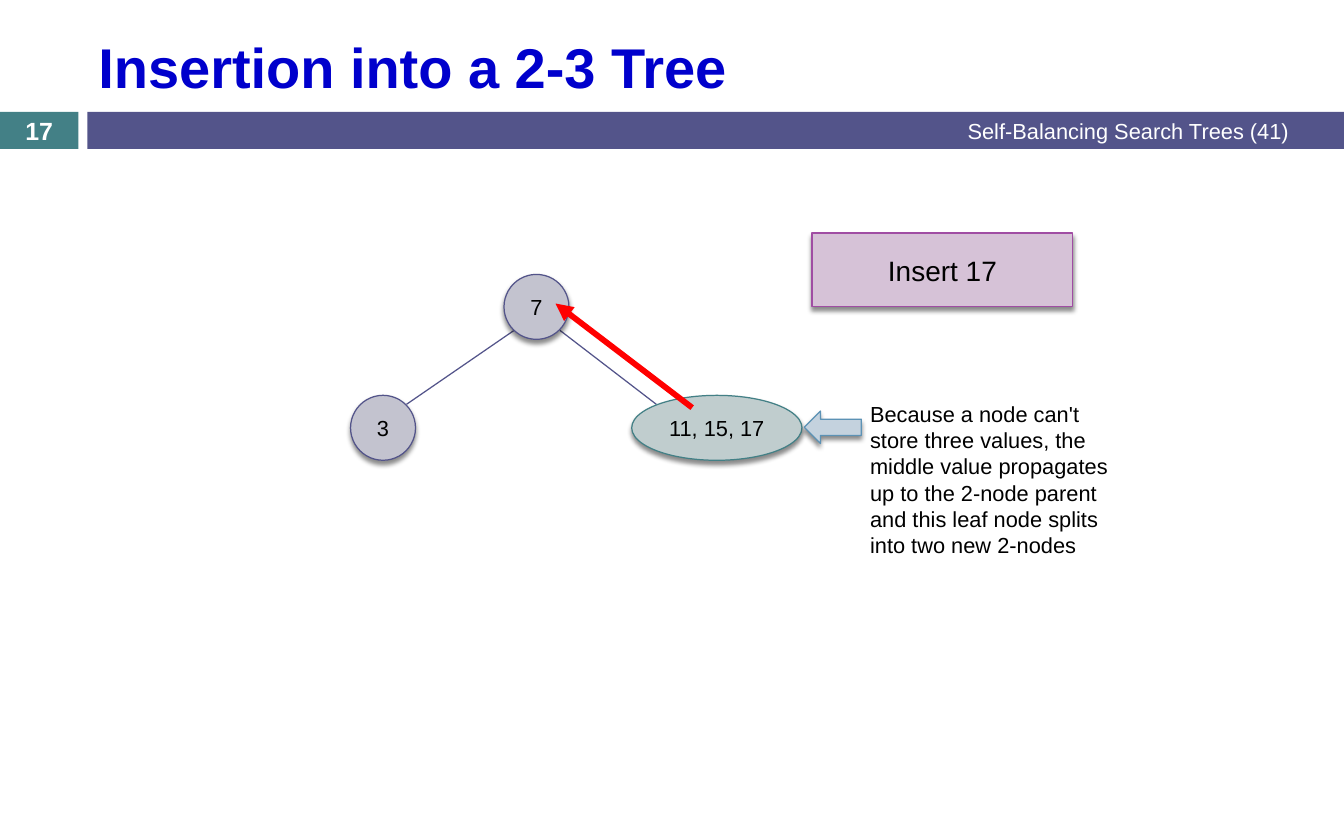
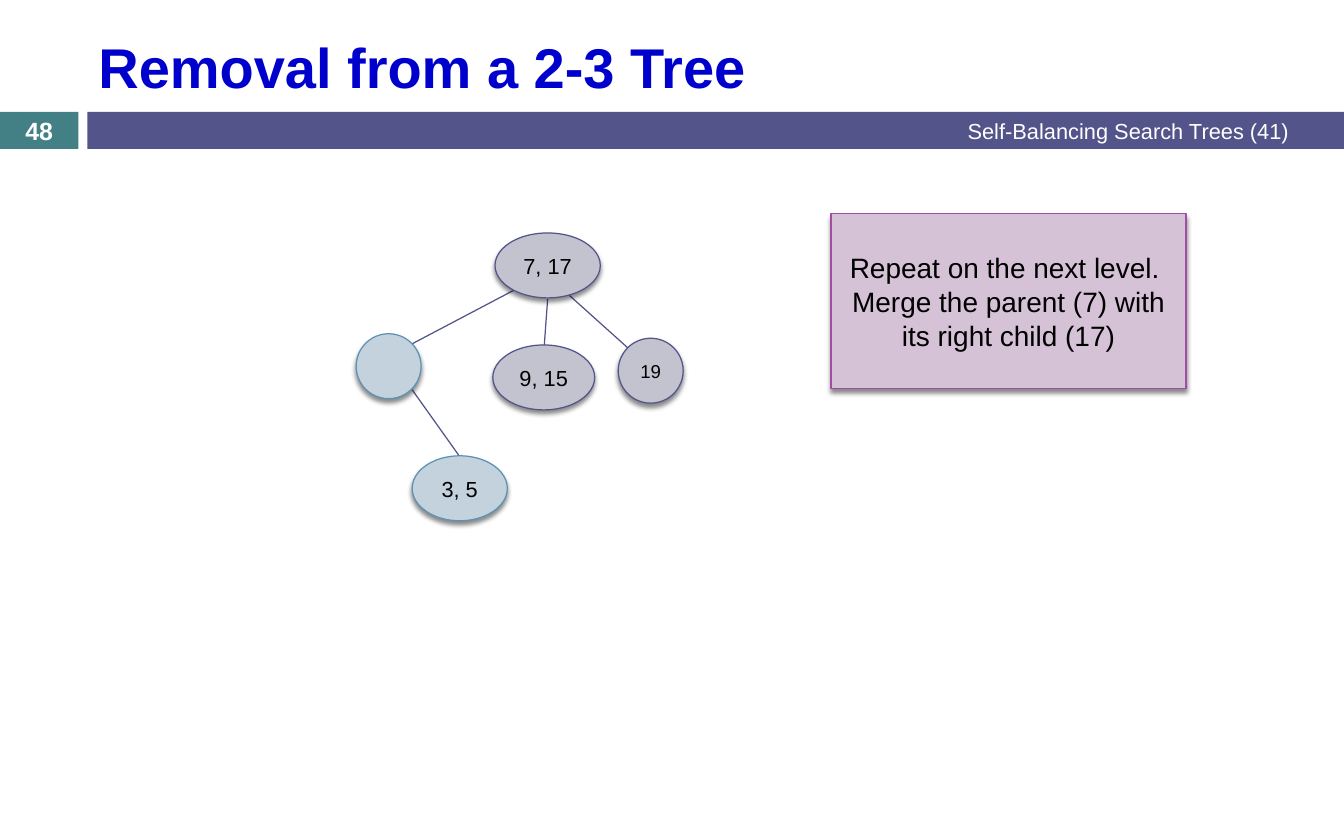
from lxml import etree
from pptx import Presentation
from pptx.dml.color import RGBColor
from pptx.enum.shapes import MSO_CONNECTOR, MSO_SHAPE
from pptx.enum.text import MSO_ANCHOR, MSO_AUTO_SIZE, PP_ALIGN
from pptx.oxml import parse_xml
from pptx.oxml.ns import nsdecls, qn
from pptx.util import Inches, Pt

RECT, ELLIPSE, ARROW = MSO_SHAPE.RECTANGLE, MSO_SHAPE.OVAL, MSO_SHAPE.RIGHT_ARROW
STRAIGHT = MSO_CONNECTOR.STRAIGHT
LEFT, CENTER, RIGHT = PP_ALIGN.LEFT, PP_ALIGN.CENTER, PP_ALIGN.RIGHT
TOP, MIDDLE = MSO_ANCHOR.TOP, MSO_ANCHOR.MIDDLE
GROW = MSO_AUTO_SIZE.SHAPE_TO_FIT_TEXT

BLACK = RGBColor(0x00, 0x00, 0x00)
WHITE = RGBColor(0xFF, 0xFF, 0xFF)
BLUE = RGBColor(0x00, 0x00, 0xCC)
RED = RGBColor(0xFF, 0x00, 0x00)
INDIGO = RGBColor(0x53, 0x54, 0x8A)
TEAL = RGBColor(0x43, 0x80, 0x86)
SKY = RGBColor(0x5C, 0x92, 0xB5)
PURPLE = RGBColor(0xA0, 0x4D, 0xA3)
PALE_INDIGO = RGBColor(0xC3, 0xC3, 0xCF)
PALE_TEAL = RGBColor(0xC0, 0xCD, 0xCE)
PALE_SKY = RGBColor(0xC4, 0xD2, 0xDE)
PALE_PURPLE = RGBColor(0xD6, 0xC2, 0xD7)

PLAIN_NODE = (PALE_INDIGO, INDIGO)
FULL_NODE = (PALE_TEAL, TEAL)
MARKED_NODE = (PALE_SKY, SKY)
NOTE = (PALE_PURPLE, PURPLE)

SHADOW = (
    f'<a:effectLst {nsdecls("a")}><a:outerShdw blurRad="38100" dist="30480" '
    'dir="5400000" rotWithShape="0"><a:srgbClr val="000000">'
    '<a:alpha val="45000"/></a:srgbClr></a:outerShdw></a:effectLst>'
)


class Deck:
    font = "Arial"
    footer = "Self-Balancing Search Trees (41)"
    outline = 0.79
    node_height = 0.58

    def __init__(self):
        self.prs = Presentation()
        self.prs.slide_width = Inches(12)
        self.prs.slide_height = Inches(7.5)
        self.s = None

    def slide(self, title, number):
        self.s = self.prs.slides.add_slide(self.prs.slide_layouts[6])
        self.band(0, 0.7, TEAL)
        self.band(0.78, 11.22, INDIGO)
        self.text(4.5, 0.99, 7.11, 0.35, self.footer, 14, WHITE, RIGHT, MIDDLE)
        self.text(0, 1, 0.7, 0.33, number, 16, WHITE, CENTER, MIDDLE, bold=True)
        self.text(0.78, 0.19, 10.7, 0.8, title, 36, BLUE, LEFT, MIDDLE, bold=True)

    def label(self, sp, text, size, color=BLACK, align=CENTER, anchor=MIDDLE, bold=False):
        tf = sp.text_frame
        tf.word_wrap = True
        tf.vertical_anchor = anchor
        tf.text = text
        for p in tf.paragraphs:
            p.alignment = align
            for r in p.runs:
                r.font.name = self.font
                r.font.size = Pt(size)
                r.font.bold = bold
                r.font.color.rgb = color

    def text(self, x, y, w, h, text, size, color=BLACK, align=LEFT, anchor=TOP, bold=False):
        sp = self.s.shapes.add_textbox(Inches(x), Inches(y), Inches(w), Inches(h))
        self.label(sp, text, size, color, align, anchor, bold)
        return sp

    def shape(self, kind, x, y, w, h, fill):
        sp = self.s.shapes.add_shape(kind, Inches(x), Inches(y), Inches(w), Inches(h))
        sp.shadow.inherit = False
        sp.fill.solid()
        sp.fill.fore_color.rgb = fill
        sp.line.fill.background()
        return sp

    def band(self, x, w, fill):
        self.shape(RECT, x, 1, w, 0.33, fill)

    def raised(self, kind, x, y, w, h, style):
        fill, line = style
        sp = self.shape(kind, x, y, w, h, fill)
        sp.line.color.rgb = line
        sp.line.width = Pt(self.outline)
        effects = sp.element.spPr.find(qn("a:effectLst"))
        effects.getparent().replace(effects, parse_xml(SHADOW))
        return sp

    def node(self, x, y, keys="", w=0.58, style=PLAIN_NODE, size=14):
        sp = self.raised(ELLIPSE, x, y, w, self.node_height, style)
        if keys:
            self.label(sp, keys, size)
            sp.text_frame.margin_left = sp.text_frame.margin_right = 0

    def note(self, x, y, w, h, text):
        self.label(self.raised(RECT, x, y, w, h, NOTE), text, 18)

    def line(self, start, end, color=INDIGO, width=outline, arrow=False):
        points = [Inches(v) for v in (*start, *end)]
        c = self.s.shapes.add_connector(STRAIGHT, *points)
        c.line.color.rgb = color
        c.line.width = Pt(width)
        spPr = c.element.spPr
        if arrow:
            etree.SubElement(spPr.find(qn("a:ln")), qn("a:tailEnd"), type="triangle")
        etree.SubElement(spPr, qn("a:effectLst"))


def insertion(deck):
    deck.slide("Insertion into a 2-3 Tree", "17")
    deck.line((4.59, 2.95), (3.63, 3.61))
    deck.line((5, 2.95), (5.86, 3.61))
    deck.node(3.13, 3.53, "3")
    deck.node(4.5, 2.45, "7")
    deck.node(5.64, 3.53, "11, 15, 17", w=1.52, style=FULL_NODE)
    deck.note(7.25, 2.08, 2.33, 0.66, "Insert 17")
    pointer = deck.raised(ARROW, 7.18, 3.67, 0.51, 0.29, MARKED_NODE)
    pointer.rotation = 180
    reason = deck.text(
        7.67, 3.53, 2.49, 1.51,
        "Because a node can't store three values, the middle value propagates "
        "up to the 2-node parent and this leaf node splits into two new 2-nodes", 14)
    reason.text_frame.auto_size = GROW
    deck.line((6.18, 3.64), (4.96, 2.71), RED, 3.75, arrow=True)


def removal(deck):
    deck.slide("Removal from a 2-3 Tree", "48")
    for start, end in (
        ((3.68, 3.48), (4.1, 4.07)),
        ((4.61, 2.58), (3.68, 3.07)),
        ((5.02, 2.58), (5.61, 3.11)),
        ((4.89, 2.67), (4.86, 3.08)),
    ):
        deck.line(start, end)
    deck.node(3.68, 4.07, "3, 5", w=0.85, style=MARKED_NODE)
    deck.node(3.18, 2.98, style=MARKED_NODE)
    deck.node(4.4, 3.08, "9, 15", w=0.91)
    deck.node(5.52, 3.02, "19", size=12)
    deck.node(4.42, 2.08, "7, 17", w=0.94)
    deck.note(7.42, 1.91, 3.17, 1.56,
              "Repeat on the next level. \nMerge the parent (7) with its right child (17)")


def main():
    deck = Deck()
    insertion(deck)
    removal(deck)
    deck.prs.save("out.pptx")


if __name__ == "__main__":
    main()
